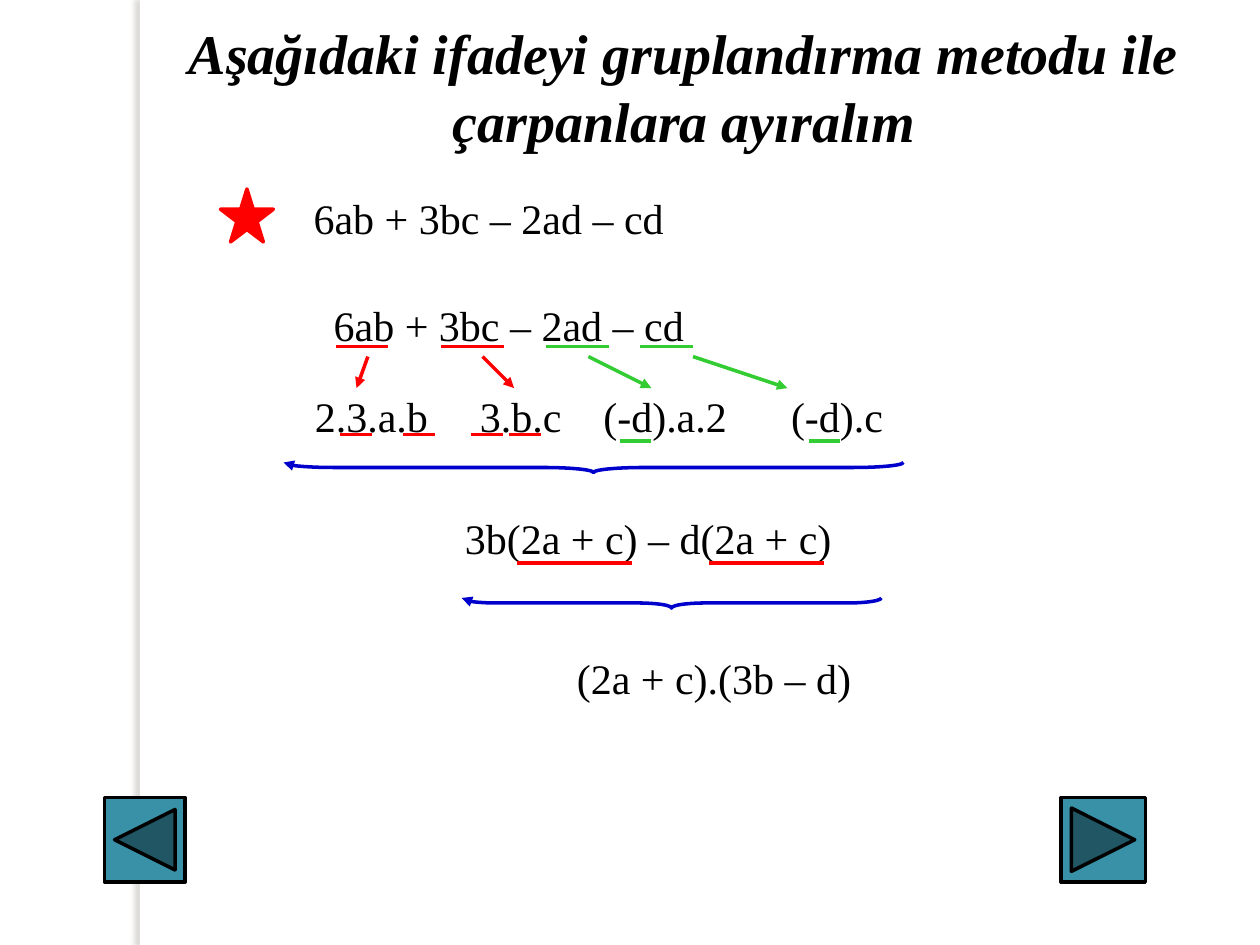
from dataclasses import dataclass

from lxml import etree
from pptx import Presentation
from pptx.dml.color import RGBColor
from pptx.enum.shapes import MSO_CONNECTOR as Connector, MSO_SHAPE as Shape
from pptx.enum.text import MSO_ANCHOR as Anchor, MSO_AUTO_SIZE as AutoSize, PP_ALIGN as Align
from pptx.oxml.ns import qn
from pptx.util import Inches, Pt


@dataclass(frozen=True)
class Theme:
    font: str = "Times New Roman"
    title_size: int = 32
    body_size: int = 24
    line_width: int = 2
    black: RGBColor = RGBColor.from_string("000000")
    white: RGBColor = RGBColor.from_string("FFFFFF")
    red: RGBColor = RGBColor.from_string("FF0000")
    green: RGBColor = RGBColor.from_string("33CC33")
    blue: RGBColor = RGBColor.from_string("0000CC")
    teal: RGBColor = RGBColor.from_string("3891A7")
    shadow: str = "736F63"


theme = Theme()


def style_text(para, size, emphasis=False):
    for span in para.runs:
        span.font.name = theme.font
        span.font.size = Pt(size)
        span.font.color.rgb = theme.black
        span.font.bold = span.font.italic = emphasis


def add_figure(kind, left, top, width, height, fill=None, line=None):
    figure = page.shapes.add_shape(kind, Inches(left), Inches(top), Inches(width), Inches(height))
    figure.shadow.inherit = False
    if fill is None:
        figure.fill.background()
    else:
        figure.fill.solid()
        figure.fill.fore_color.rgb = fill
    if line is None:
        figure.line.fill.background()
    else:
        figure.line.color.rgb = line
        figure.line.width = Pt(theme.line_width)
    return figure


deck = Presentation()
deck.slide_width, deck.slide_height = Inches(10), Inches(7.5)
page = deck.slides.add_slide(deck.slide_layouts[5])

# Title
title = page.shapes.title
title.left, title.top, title.width, title.height = Inches(1.35), Inches(0.1), Inches(8.16), Inches(1.17)
title.text_frame.text = "Aşağıdaki ifadeyi gruplandırma metodu ile\nçarpanlara ayıralım"
title.text_frame.auto_size = AutoSize.NONE
title.text_frame.vertical_anchor = Anchor.TOP
for para in title.text_frame.paragraphs:
    para.alignment = Align.CENTER
    style_text(para, theme.title_size, emphasis=True)

# Side strip with a soft shadow to its left
strip = add_figure(Shape.RECTANGLE, 1.11, 0, 0.08, 7.5, fill=theme.white)
effects = strip._element.spPr.find(qn("a:effectLst"))
shadow = etree.SubElement(effects, qn("a:outerShdw"), blurRad=str(Pt(3)), dist=str(Pt(3)),
                          dir=str(180 * 60000), algn="tl", rotWithShape="0")
shadow_color = etree.SubElement(shadow, qn("a:srgbClr"), val=theme.shadow)
etree.SubElement(shadow_color, qn("a:alpha"), val="25000")

# Navigation buttons and star
add_figure(Shape.ACTION_BUTTON_FORWARD_OR_NEXT, 8.42, 6.33, 0.67, 0.67, theme.teal, theme.black)
add_figure(Shape.ACTION_BUTTON_BACK_OR_PREVIOUS, 0.83, 6.33, 0.64, 0.67, theme.teal, theme.black)
add_figure(Shape.STAR_5_POINT, 1.75, 1.5, 0.42, 0.42, theme.red, theme.red)

# Steps of the factorisation: text, left, top, width, tab stops
expression = "6ab + 3bc – 2ad – cd"
steps = [
    (expression, 2.39, 1.48, 3.06, []),
    (expression, 2.55, 2.33, 3.06, []),
    ("2.3.a.b\t3.b.c\t(-d).a.2\t(-d).c", 2.4, 3.05, 5.04, [1.31, 2.29, 3.78]),
    ("3b(2a + c) – d(2a + c)", 3.59, 4.02, 3.11, []),
    ("(2a + c).(3b – d)", 4.48, 5.13, 2.38, []),
]
for text, left, top, width, stops in steps:
    box = page.shapes.add_textbox(Inches(left), Inches(top), Inches(width), Inches(0.5))
    box.text_frame.word_wrap = bool(stops)
    box.text_frame.text = text
    para = box.text_frame.paragraphs[0]
    style_text(para, theme.body_size)
    if stops:
        tab_list = etree.SubElement(para._p.get_or_add_pPr(), qn("a:tabLst"))
        for stop in stops:
            etree.SubElement(tab_list, qn("a:tab"), pos=str(Inches(stop)), algn="l")

# Underlines by row: height, colour, (start, end) pairs
underlines = [
    (2.75, theme.red, [(2.67, 3.08), (3.5, 4)]),
    (2.75, theme.green, [(4.33, 4.83), (5.08, 5.5)]),
    (3.45, theme.red, [(x, x + 0.25) for x in (2.7, 3.2, 3.74, 4.04)]),
    (3.5, theme.green, [(x, x + 0.25) for x in (4.92, 6.42)]),
    (4.47, theme.red, [(4.1, 5.02), (5.63, 6.54)]),
]
strokes = [(start, y, end, y, color, False)
           for y, color, spans in underlines for start, end in spans]

# Arrows from each term to its factors
arrows = [(2.92, 2.83, theme.red), (3.83, 4.08, theme.red),
          (4.67, 5.17, theme.green), (5.5, 6.25, theme.green)]
strokes += [(start, 2.83, end, 3.08, color, True) for start, end, color in arrows]

for x1, y1, x2, y2, color, pointed in strokes:
    stroke = page.shapes.add_connector(Connector.STRAIGHT, Inches(x1), Inches(y1), Inches(x2), Inches(y2))
    stroke.line.color.rgb = color
    stroke.line.width = Pt(theme.line_width)
    if pointed:
        etree.SubElement(stroke.line._get_or_add_ln(), qn("a:tailEnd"), type="triangle")
    etree.SubElement(stroke._element.spPr, qn("a:effectLst"))

# Braces lying under the grouped terms
for left, top, length, curl in [(4.67, 1.25, 4.92, 4.917), (5.29, 3.12, 3.33, 3.333)]:
    brace = add_figure(Shape.LEFT_BRACE, left, top, 0.08, length, line=theme.blue)
    brace.rotation = 270
    brace.adjustments[0] = curl
    etree.SubElement(brace.line._get_or_add_ln(), qn("a:tailEnd"), type="triangle")

deck.save("out.pptx")
